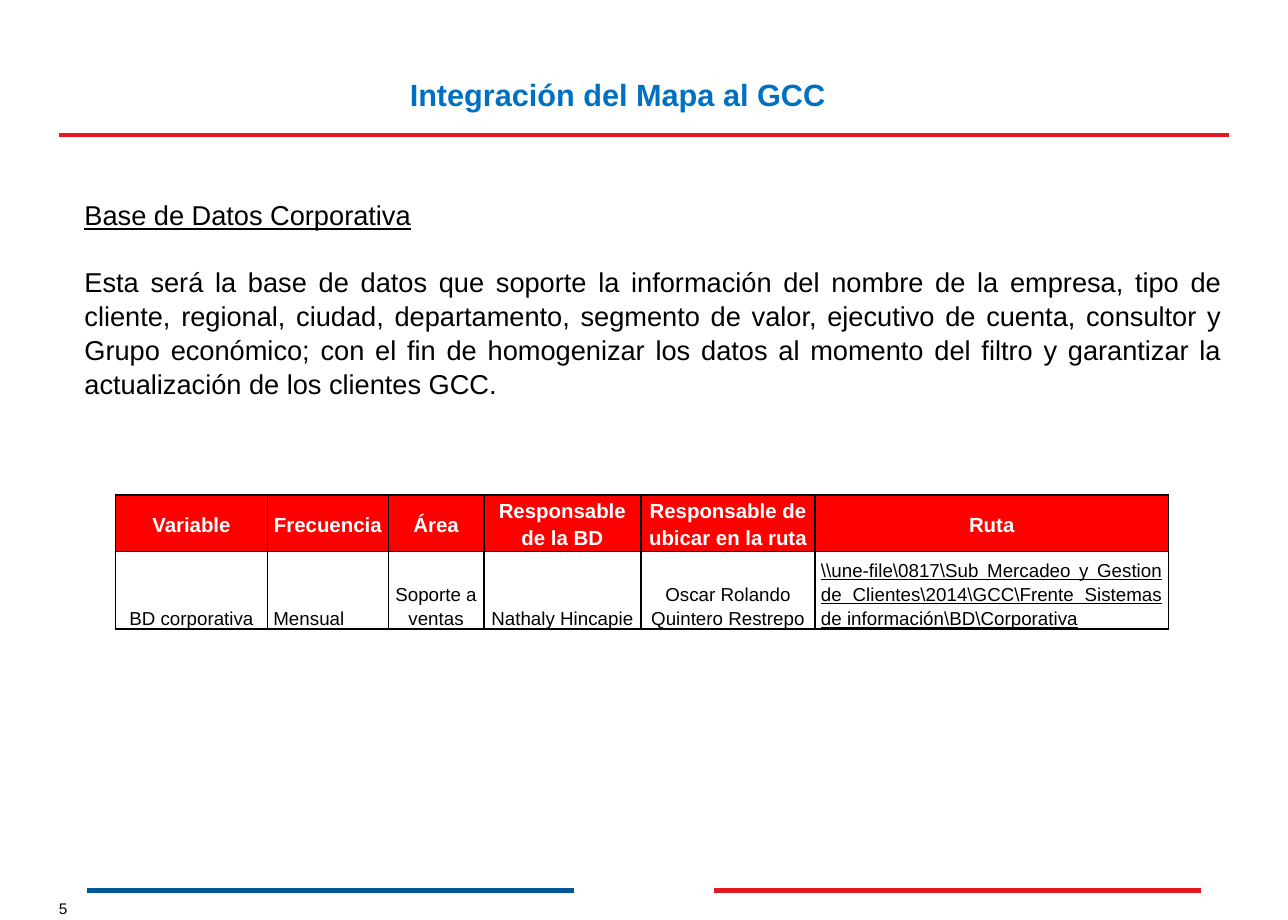
import pptx
import pptx.util
import pptx.dml.color
import pptx.enum.shapes
import pptx.enum.text
import pptx.oxml.ns
from lxml import etree
from pptx.util import Cm

BLACK = pptx.dml.color.RGBColor(0x00, 0x00, 0x00)
WHITE = pptx.dml.color.RGBColor(0xFF, 0xFF, 0xFF)
RED = pptx.dml.color.RGBColor(0xFF, 0x00, 0x00)
RULE_RED = pptx.dml.color.RGBColor(0xE4, 0x1A, 0x22)
RULE_BLUE = pptx.dml.color.RGBColor(0x00, 0x56, 0x97)
TITLE_BLUE = pptx.dml.color.RGBColor(0x00, 0x70, 0xC0)

LEFT = pptx.enum.text.PP_ALIGN.LEFT
CENTER = pptx.enum.text.PP_ALIGN.CENTER
JUSTIFY = pptx.enum.text.PP_ALIGN.JUSTIFY
MIDDLE = pptx.enum.text.MSO_ANCHOR.MIDDLE
BOTTOM = pptx.enum.text.MSO_ANCHOR.BOTTOM

COLUMN_WIDTHS = (3.15, 2.5, 1.98, 3.25, 3.61, 7.31)
ROW_HEIGHTS = (1.17, 1.6)
HEADERS = (
    "Variable",
    "Frecuencia",
    "Área",
    "Responsable de la BD",
    "Responsable de ubicar en la ruta",
    "Ruta",
)
VALUES = (
    ("BD corporativa", CENTER, False),
    ("Mensual", JUSTIFY, False),
    ("Soporte a ventas", CENTER, False),
    ("Nathaly Hincapie", CENTER, False),
    ("Oscar Rolando Quintero Restrepo", CENTER, False),
    (
        r"\\une-file\0817\Sub Mercadeo y Gestion de Clientes\2014\GCC"
        r"\Frente Sistemas de información\BD\Corporativa",
        JUSTIFY,
        True,
    ),
)
DESCRIPTION = (
    "Esta será la base de datos que soporte la información del nombre de la "
    "empresa, tipo de cliente, regional, ciudad, departamento, segmento de "
    "valor, ejecutivo de cuenta, consultor y Grupo económico; con el fin de "
    "homogenizar los datos al momento del filtro y garantizar la "
    "actualización de los clientes GCC."
)


class SlideBuilder:
    def __init__(self, page, font="Arial"):
        self.page = page
        self.font = font

    def add_span(self, para, text, size, color=BLACK, align=LEFT, bold=False, underline=False):
        para.alignment = align
        span = para.add_run()
        span.text = text
        span.font.name = self.font
        span.font.size = pptx.util.Pt(size)
        span.font.color.rgb = color
        span.font.bold = bold
        span.font.underline = underline

    def text_frame(self, left, top, width, height, wrap=True, inset=None):
        box = self.page.shapes.add_textbox(Cm(left), Cm(top), Cm(width), Cm(height))
        frame = box.text_frame
        frame.word_wrap = wrap
        if inset is not None:
            frame.margin_left = frame.margin_right = Cm(inset)
            frame.margin_top = frame.margin_bottom = Cm(inset)
        return frame

    def rule(self, left, top, length, color, weight):
        line = self.page.shapes.add_connector(
            pptx.enum.shapes.MSO_CONNECTOR.STRAIGHT,
            Cm(left), Cm(top), Cm(left + length), Cm(top),
        )
        line.line.color.rgb = color
        line.line.width = pptx.util.Pt(weight)
        etree.SubElement(line._element.spPr, pptx.oxml.ns.qn("a:effectLst"))

    def border(self, cell):
        properties = cell._tc.get_or_add_tcPr()
        for position, side in enumerate(("lnL", "lnR", "lnT", "lnB")):
            edge = etree.Element(pptx.oxml.ns.qn("a:" + side), w=str(pptx.util.Pt(1)))
            fill = etree.SubElement(edge, pptx.oxml.ns.qn("a:solidFill"))
            etree.SubElement(fill, pptx.oxml.ns.qn("a:srgbClr"), val=str(BLACK))
            properties.insert(position, edge)

    def cell(self, cell, text, size, anchor, fill=None, **style):
        cell.margin_left = cell.margin_right = Cm(0.12)
        cell.margin_top = cell.margin_bottom = 0
        cell.vertical_anchor = anchor
        if fill is None:
            cell.fill.background()
        else:
            cell.fill.solid()
            cell.fill.fore_color.rgb = fill
        self.border(cell)
        para = cell.text_frame.paragraphs[0]
        para.line_spacing = 1.15
        self.add_span(para, text, size, **style)

    def table(self, left, top):
        table = self.page.shapes.add_table(
            len(ROW_HEIGHTS), len(COLUMN_WIDTHS), Cm(left), Cm(top),
            Cm(sum(COLUMN_WIDTHS)), Cm(sum(ROW_HEIGHTS)),
        ).table
        for column, width in zip(table.columns, COLUMN_WIDTHS):
            column.width = Cm(width)
        for row, height in zip(table.rows, ROW_HEIGHTS):
            row.height = Cm(height)
        for index, header in enumerate(HEADERS):
            self.cell(table.cell(0, index), header, 12, MIDDLE, RED,
                      color=WHITE, align=CENTER, bold=True)
        for index, (value, align, underline) in enumerate(VALUES):
            self.cell(table.cell(1, index), value, 11, BOTTOM,
                      align=align, underline=underline)


def main():
    deck = pptx.Presentation()
    deck.slide_width = Cm(26.67)
    deck.slide_height = Cm(19.05)
    page = deck.slides.add_slide(deck.slide_layouts[6])
    builder = SlideBuilder(page)

    number = builder.text_frame(1.22, 18.62, 0.5, 0.36, wrap=False, inset=0)
    builder.add_span(number.paragraphs[0], "5", 9)

    builder.rule(1.22, 2.79, 24.23, RULE_RED, 2.25)
    for left, color in ((14.78, RULE_RED), (1.8, RULE_BLUE)):
        builder.rule(left, 18.44, 10.09, color, 3)

    title = builder.text_frame(4.65, 1.45, 16.28, 1.02)
    builder.add_span(title.paragraphs[0], "Integración del Mapa al GCC", 18,
                     TITLE_BLUE, CENTER, bold=True)

    builder.table(2.39, 10.25)

    body = builder.text_frame(1.5, 3.96, 24.05, 4.95)
    heading = body.paragraphs[0]
    builder.add_span(heading, "Base de Datos Corporativa", 16, underline=True)
    description = body.add_paragraph()
    description.space_before = pptx.util.Pt(19)
    builder.add_span(description, DESCRIPTION, 16, align=JUSTIFY)
    for para in body.paragraphs:
        para.line_spacing = 1.04

    deck.save("out.pptx")


if __name__ == "__main__":
    main()
